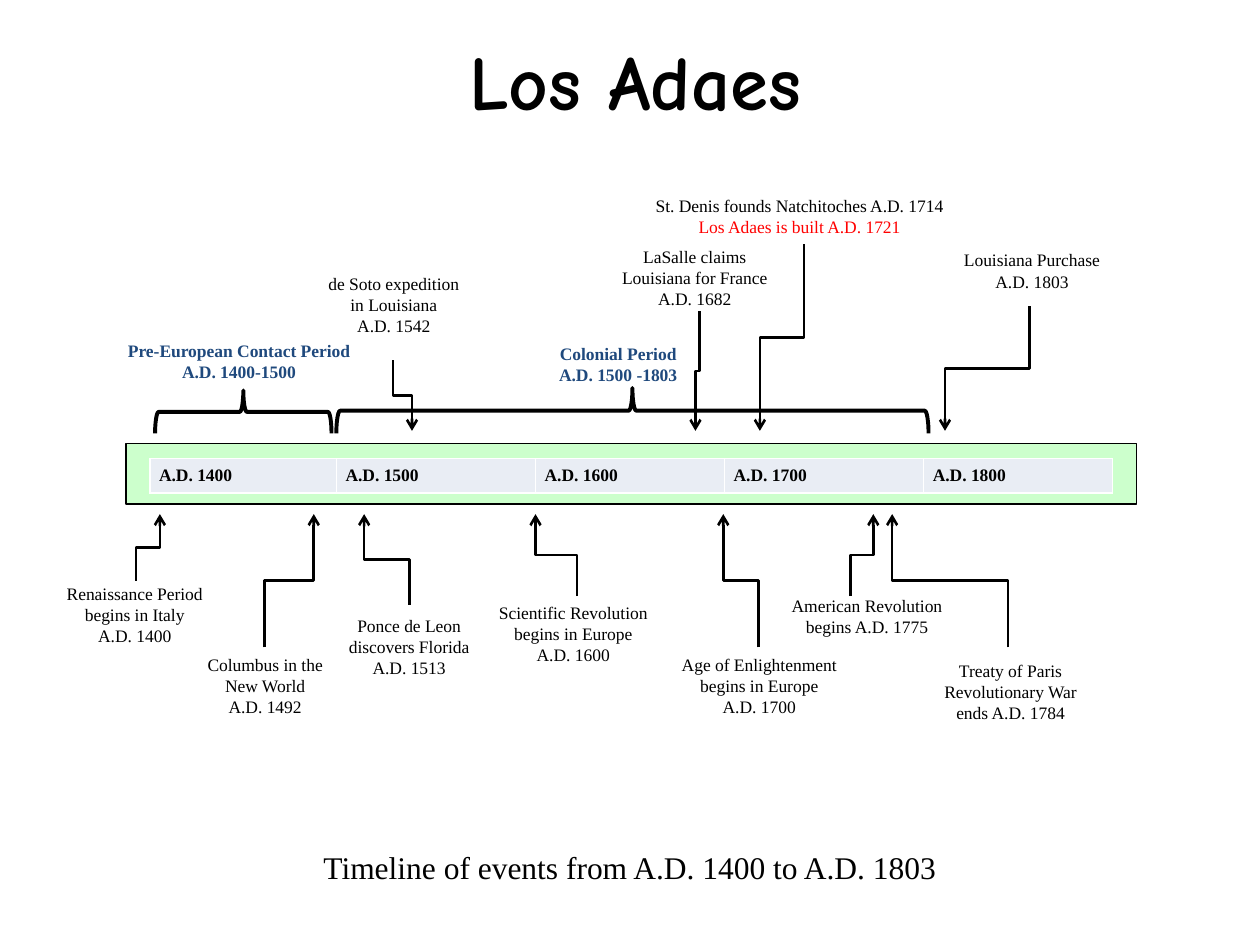
from dataclasses import dataclass

from lxml import etree
from pptx import Presentation
from pptx.dml.color import RGBColor
from pptx.enum.shapes import MSO_CONNECTOR, MSO_SHAPE
from pptx.enum.text import MSO_ANCHOR, MSO_AUTO_SIZE, PP_ALIGN
from pptx.oxml.ns import qn
from pptx.util import Pt

ELBOW = MSO_CONNECTOR.ELBOW
RECT, BRACE = MSO_SHAPE.RECTANGLE, MSO_SHAPE.LEFT_BRACE
MIDDLE, CENTER = MSO_ANCHOR.MIDDLE, PP_ALIGN.CENTER
GROW = MSO_AUTO_SIZE.SHAPE_TO_FIT_TEXT

BLACK = RGBColor(0, 0, 0)
WHITE = RGBColor(255, 255, 255)
RED = RGBColor(255, 0, 0)
NAVY = RGBColor(0x1F, 0x49, 0x7D)
GREEN = RGBColor(0xCC, 0xFF, 0xCC)
PALE = RGBColor(0xE9, 0xED, 0xF4)
SERIF, COMIC = "Times New Roman", "Comic Neue"

# Arrow tips just above and just below the band
ABOVE, BELOW = 246.2, 293.8


@dataclass
class Event:
    lines: list[str]
    mid: float  # centre of the label
    top: float
    wide: float
    start: tuple[float, float]
    tip: tuple[float, float]
    last: RGBColor = BLACK  # colour of the last line


@dataclass
class Period:
    lines: list[str]
    mid: float
    top: float
    wide: float
    hub: tuple[float, float]  # centre of the brace
    span: float
    depth: float


EVENTS = [
    Event(["LaSalle claims", "Louisiana for France", "A.D. 1682"],
          397, 136.8, 98.6, (399.6, 177.8), (397.4, ABOVE)),
    Event(["St. Denis founds Natchitoches A.D. 1714",
           "Los Adaes is built A.D. 1721"],
          456.8, 108, 182, (459.4, 139.7), (434.2, ABOVE), RED),
    Event(["Columbus in the", "New World", "A.D. 1492"],
          151.5, 370, 81.4, (151.2, 370), (179.3, BELOW)),
    Event(["American Revolution", "begins A.D. 1775"],
          495.4, 336.2, 102.2, (486, 340.6), (499, BELOW)),
    Event(["de Soto expedition", "in Louisiana", "A.D. 1542"],
          225, 152.6, 90, (224.6, 205.9), (235.4, ABOVE)),
    Event(["Ponce de Leon", "discovers Florida", "A.D. 1513"],
          233.8, 347.8, 84.2, (234, 345.6), (208.1, BELOW)),
    Event(["Renaissance Period", "begins in Italy", "A.D. 1400"],
          77, 329.8, 93.6, (77.8, 331.9), (91.4, BELOW)),
    Event(["Age of Enlightenment", "begins in Europe", "A.D. 1700"],
          433.8, 370, 104.4, (433.4, 370), (413.3, BELOW)),
    Event(["Scientific Revolution", "begins in Europe", "A.D. 1600"],
          327.6, 340.6, 100.8, (329.8, 340.6), (306, BELOW)),
    Event(["Louisiana Purchase", "A.D. 1803"],
          589.7, 139, 93.6, (588.2, 175), (540, ABOVE)),
    Event(["Treaty of Paris", "Revolutionary War", "ends A.D. 1784"],
          577.4, 373.7, 92.2, (576, 370), (509.8, BELOW)),
]
PERIODS = [
    Period(["Pre-European Contact Period", "A.D. 1400-1500"],
           136.5, 190.8, 145.4, (139, 235.4), 100.8, 24.5),
    Period(["Colonial Period", "A.D. 1500 -1803"],
           353.2, 192.2, 82.8, (361.4, 234.7), 338.4, 25.9),
]
CENTURIES = [(1400, 106.6), (1500, 113.8), (1600, 108),
             (1700, 113.8), (1800, 108)]


def write(para, text: str, size: float, color: RGBColor = BLACK,
          bold: bool = False, face: str = SERIF) -> None:
    run = para.add_run()
    run.text = text
    font = run.font
    font.name, font.size, font.bold = face, Pt(size), bold
    font.color.rgb = color


def label(slide, lines: list[str], mid: float, top: float, wide: float,
          colors: list[RGBColor], size: float = 10, bold: bool = False,
          wrap: bool = False) -> None:
    high = 7.2 + 1.2 * size * len(lines)
    box = slide.shapes.add_textbox(Pt(mid - wide / 2), Pt(top),
                                   Pt(wide), Pt(high))
    frame = box.text_frame
    frame.word_wrap, frame.auto_size = wrap, GROW
    for i, (text, color) in enumerate(zip(lines, colors)):
        para = frame.add_paragraph() if i else frame.paragraphs[0]
        para.alignment = CENTER
        write(para, text, size, color, bold)


def arrow(slide, start: tuple[float, float], tip: tuple[float, float]) -> None:
    """Elbow that leaves and arrives vertically: a quarter-turned connector."""
    dx, dy = tip[0] - start[0], tip[1] - start[1]
    cx, cy = start[0] + dx / 2, start[1] + dy / 2
    turn = 1 if dx * dy < 0 else -1
    across, down = turn * dy / 2, turn * dx / 2
    line = slide.shapes.add_connector(ELBOW, Pt(cx - across), Pt(cy + down),
                                      Pt(cx + across), Pt(cy - down))
    line.line.color.rgb, line.line.width = BLACK, Pt(1.5)
    props = line._element.spPr
    props.find(qn("a:xfrm")).set("rot", str(turn % 4 * 5400000))
    etree.SubElement(props.find(qn("a:ln")), qn("a:tailEnd"), type="arrow")
    etree.SubElement(props, qn("a:effectLst"))


def brace(slide, hub: tuple[float, float], span: float, depth: float) -> None:
    shape = slide.shapes.add_shape(BRACE, Pt(hub[0] - depth / 2),
                                   Pt(hub[1] - span / 2), Pt(depth), Pt(span))
    shape.rotation = 90
    shape.shadow.inherit = False
    shape.fill.background()
    shape.line.color.rgb, shape.line.width = BLACK, Pt(2.25)


def border(cell) -> None:
    props = cell._tc.get_or_add_tcPr()
    for i, side in enumerate(("a:lnL", "a:lnR", "a:lnT", "a:lnB")):
        edge = etree.Element(qn(side), w=str(Pt(1)))
        fill = etree.SubElement(edge, qn("a:solidFill"))
        etree.SubElement(fill, qn("a:srgbClr"), val=str(WHITE))
        props.insert(i, edge)


def band(slide) -> None:
    back = slide.shapes.add_shape(RECT, Pt(72), Pt(253.5), Pt(577.5), Pt(34.5))
    back.shadow.inherit = False
    back.fill.solid()
    back.fill.fore_color.rgb = GREEN
    back.line.color.rgb, back.line.width = BLACK, Pt(0.75)

    total = sum(wide for _, wide in CENTURIES)
    table = slide.shapes.add_table(1, len(CENTURIES), Pt(85.7), Pt(262.1),
                                   Pt(total), Pt(19.6)).table
    table.first_row = table.horz_banding = False
    for i, (year, wide) in enumerate(CENTURIES):
        table.columns[i].width = Pt(wide)
        cell = table.cell(0, i)
        cell.fill.solid()
        cell.fill.fore_color.rgb = PALE
        cell.vertical_anchor = MIDDLE
        cell.margin_left = cell.margin_right = Pt(5.2)
        cell.margin_top = cell.margin_bottom = 0
        write(cell.text_frame.paragraphs[0], f"A.D. {year}", 10, bold=True)
        border(cell)


def main() -> None:
    deck = Presentation()
    deck.slide_width, deck.slide_height = Pt(720), Pt(540)
    slide = deck.slides.add_slide(deck.slide_layouts[5])

    # Title and caption
    title = slide.shapes.title
    title.left, title.top = Pt(23.8), Pt(12.2)
    title.width, title.height = Pt(678.2), Pt(66.2)
    title.text_frame.vertical_anchor = MIDDLE
    head = title.text_frame.paragraphs[0]
    head.alignment = CENTER
    write(head, "Los Adaes", 44, bold=True, face=COMIC)
    label(slide, ["Timeline of events from A.D. 1400 to A.D. 1803"],
          360, 481, 648, [BLACK], size=18, wrap=True)

    # Band of centuries
    band(slide)

    # Events with their arrows
    for event in EVENTS:
        arrow(slide, event.start, event.tip)
        colors = [BLACK] * (len(event.lines) - 1) + [event.last]
        label(slide, event.lines, event.mid, event.top, event.wide, colors)

    # Periods with their braces
    for era in PERIODS:
        brace(slide, era.hub, era.span, era.depth)
        label(slide, era.lines, era.mid, era.top, era.wide,
              [NAVY] * len(era.lines), bold=True)

    deck.save("out.pptx")


if __name__ == "__main__":
    main()
